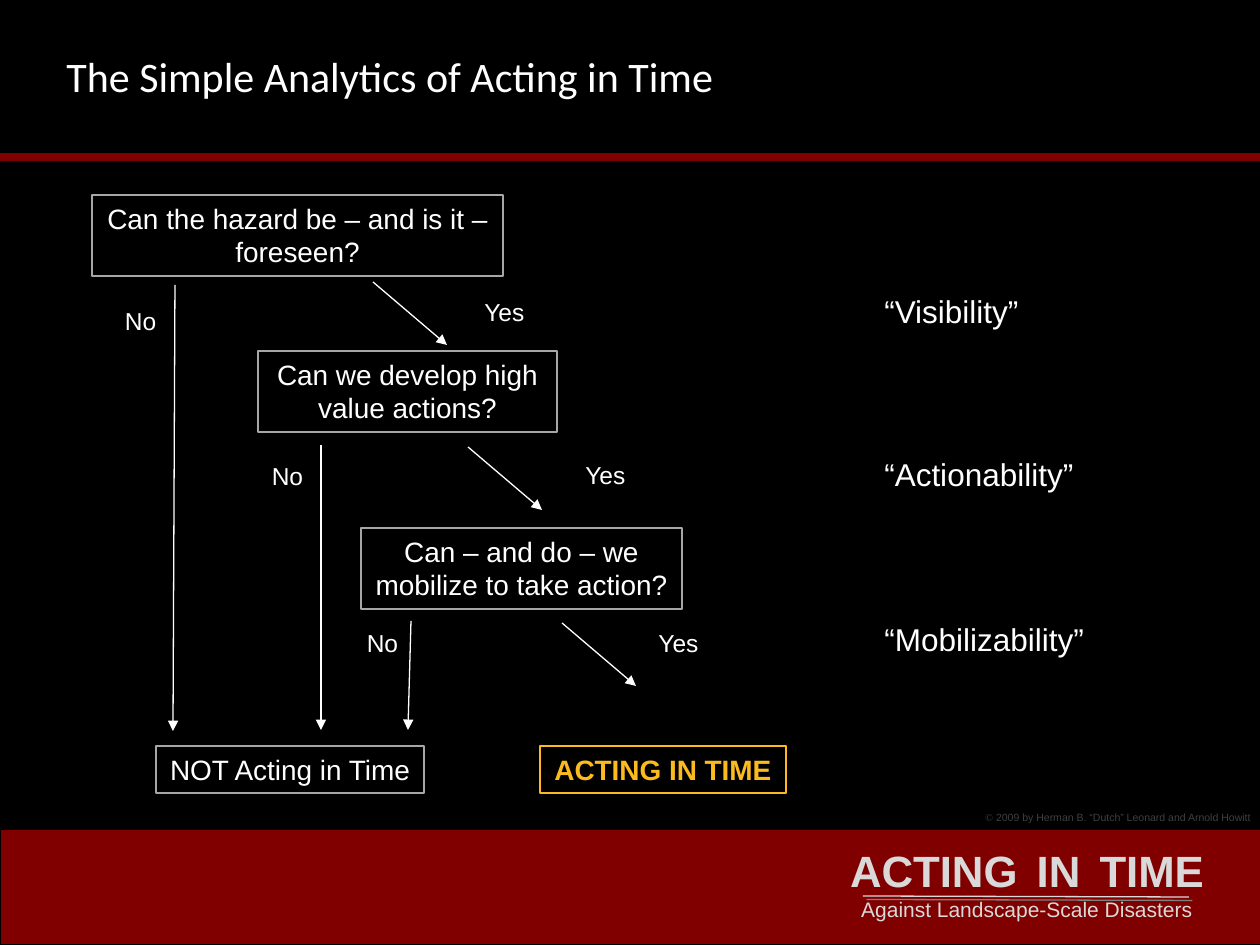
"""Build the decision ladder slide on acting in time."""
from lxml.etree import SubElement
from pptx import Presentation
from pptx.dml.color import RGBColor
from pptx.enum.shapes import MSO_CONNECTOR, MSO_SHAPE
from pptx.enum.text import MSO_ANCHOR, MSO_AUTO_SIZE, PP_ALIGN
from pptx.oxml.ns import qn
from pptx.util import Emu, Pt

BLACK = RGBColor(0x00, 0x00, 0x00)
WHITE = RGBColor(0xFF, 0xFF, 0xFF)
MAROON = RGBColor(0x80, 0x00, 0x00)
GOLD = RGBColor(0xFB, 0xBB, 0x1F)
SILVER = RGBColor(0xA6, 0xA6, 0xA6)
PALE = RGBColor(0xD9, 0xD9, 0xD9)
DIM = RGBColor(0x40, 0x40, 0x40)

TITLE = "The Simple Analytics of Acting in Time"
QUESTIONS = [
    (["Can the hazard be – and is it – ", "foreseen?"], (92, 195, 411, 81)),
    (["Can we develop high", "value actions?"], (258, 351, 299, 81)),
    (["Can – and do – we", "mobilize to take action?"], (361, 528, 321, 81)),
]
OUTCOMES = [
    ("NOT Acting in Time", (156, 746, 268, 47), SILVER, WHITE, False),
    ("ACTING IN TIME", (540, 746, 246, 47), GOLD, GOLD, True),
]
CRITERIA = [
    ("“Visibility”", 286, 161),
    ("“Actionability”", 449, 217),
    ("“Mobilizability”", 614, 227),
]
NO_LABELS = [(112, 300), (259, 455), (354, 622)]
YES_LABELS = [(472, 291), (573, 454), (646, 622)]
NO_ARROWS = [(175, 285, 173, 731), (321, 445, 321, 730), (411, 621, 408, 730)]
YES_STARTS = [(373, 282), (468, 447), (562, 623)]
YES_STEP = (74, 63)
COPYRIGHT = [("©", {"font": "Times New Roman"}),
             (" 2009 by Herman B. “Dutch” Leonard and Arnold Howitt", {})]
BANNER = [("ACTING", {}), (" ", {"spacing": 4}), ("IN", {}),
          (" ", {"spacing": 4}), ("TIME", {})]
TAGLINE = [("Against Landscape-Scale Disasters", {"size": 12, "bold": False})]


def px(n):
    return Emu(round(n * 914400 / 126))


def add_text(s, lines, box, size=16, font="Arial", color=WHITE, bold=False,
             align=PP_ALIGN.CENTER, anchor=MSO_ANCHOR.TOP, wrap=False,
             grow=True, border=None):
    at = [px(n) for n in box]
    if border is None:
        sp = s.shapes.add_textbox(*at)
    else:
        sp = s.shapes.add_shape(MSO_SHAPE.RECTANGLE, *at)
        sp.shadow.inherit = False
        sp.fill.background()
        sp.line.color.rgb = border
        sp.line.width = Pt(0.75)
    tf = sp.text_frame
    tf.word_wrap = wrap
    tf.auto_size = MSO_AUTO_SIZE.SHAPE_TO_FIT_TEXT if grow else MSO_AUTO_SIZE.NONE
    tf.vertical_anchor = anchor
    for i, line in enumerate(lines):
        p = tf.paragraphs[0] if i == 0 else tf.add_paragraph()
        p.alignment = align
        for text, fmt in [(line, {})] if isinstance(line, str) else line:
            r = p.add_run()
            r.text = text
            r.font.size = Pt(fmt.get("size", size))
            r.font.name = fmt.get("font", font)
            r.font.bold = fmt.get("bold", bold)
            r.font.color.rgb = color
            if "spacing" in fmt:
                r.font._element.set("spc", str(fmt["spacing"] * 100))


def add_line(s, ends, color=WHITE, width=0.75, arrow=False, shadow=False):
    c = s.shapes.add_connector(MSO_CONNECTOR.STRAIGHT, *[px(n) for n in ends])
    c.line.color.rgb = color
    c.line.width = Pt(width)
    if arrow:
        SubElement(c.line._get_or_add_ln(), qn("a:tailEnd"), type="triangle")
    effects = SubElement(c._element.spPr, qn("a:effectLst"))
    if shadow:
        cast = SubElement(effects, qn("a:outerShdw"), dist=str(Pt(2.8)),
                          dir="2700000", algn="ctr", rotWithShape="0")
        SubElement(cast, qn("a:srgbClr"), val="808080")


def add_frame(s):
    add_line(s, (0, 157, 1260, 157), MAROON, 4.5)
    band = s.shapes.add_shape(MSO_SHAPE.RECTANGLE, *[px(n) for n in (0, 829, 1261, 116)])
    band.shadow.inherit = False
    band.fill.solid()
    band.fill.fore_color.rgb = MAROON
    band.line.color.rgb = BLACK
    band.line.width = Pt(0.75)
    add_text(s, [COPYRIGHT], (771, 805, 492, 25), size=6, color=DIM,
             align=PP_ALIGN.RIGHT, wrap=True)
    add_text(s, [BANNER, TAGLINE], (794, 838, 466, 91), size=25, color=PALE,
             bold=True, wrap=True)
    add_line(s, (863, 896, 1189, 897), PALE, shadow=True)
    add_text(s, [TITLE], (54, 34, 1071, 84), size=24, font="Calibri",
             align=PP_ALIGN.LEFT, anchor=MSO_ANCHOR.MIDDLE, wrap=True, grow=False)


def add_ladder(s):
    for lines, box in QUESTIONS:
        add_text(s, lines, box, border=SILVER)
    for text, box, border, color, bold in OUTCOMES:
        add_text(s, [text], box, color=color, bold=bold, border=border)
    for text, top, width in CRITERIA:
        add_text(s, [text], (872, top, width, 50), size=18, align=PP_ALIGN.LEFT)
    for word, width, places in (("No", 57, NO_LABELS), ("Yes", 65, YES_LABELS)):
        for x, y in places:
            add_text(s, [word], (x, y, width, 43), size=14)
    dx, dy = YES_STEP
    for ends in NO_ARROWS + [(x, y, x + dx, y + dy) for x, y in YES_STARTS]:
        add_line(s, ends, arrow=True)


def main():
    prs = Presentation()
    prs.slide_width, prs.slide_height = px(1260), px(945)
    s = prs.slides.add_slide(prs.slide_layouts[6])
    s.background.fill.solid()
    s.background.fill.fore_color.rgb = BLACK
    add_frame(s)
    add_ladder(s)
    prs.save("out.pptx")


if __name__ == "__main__":
    main()
